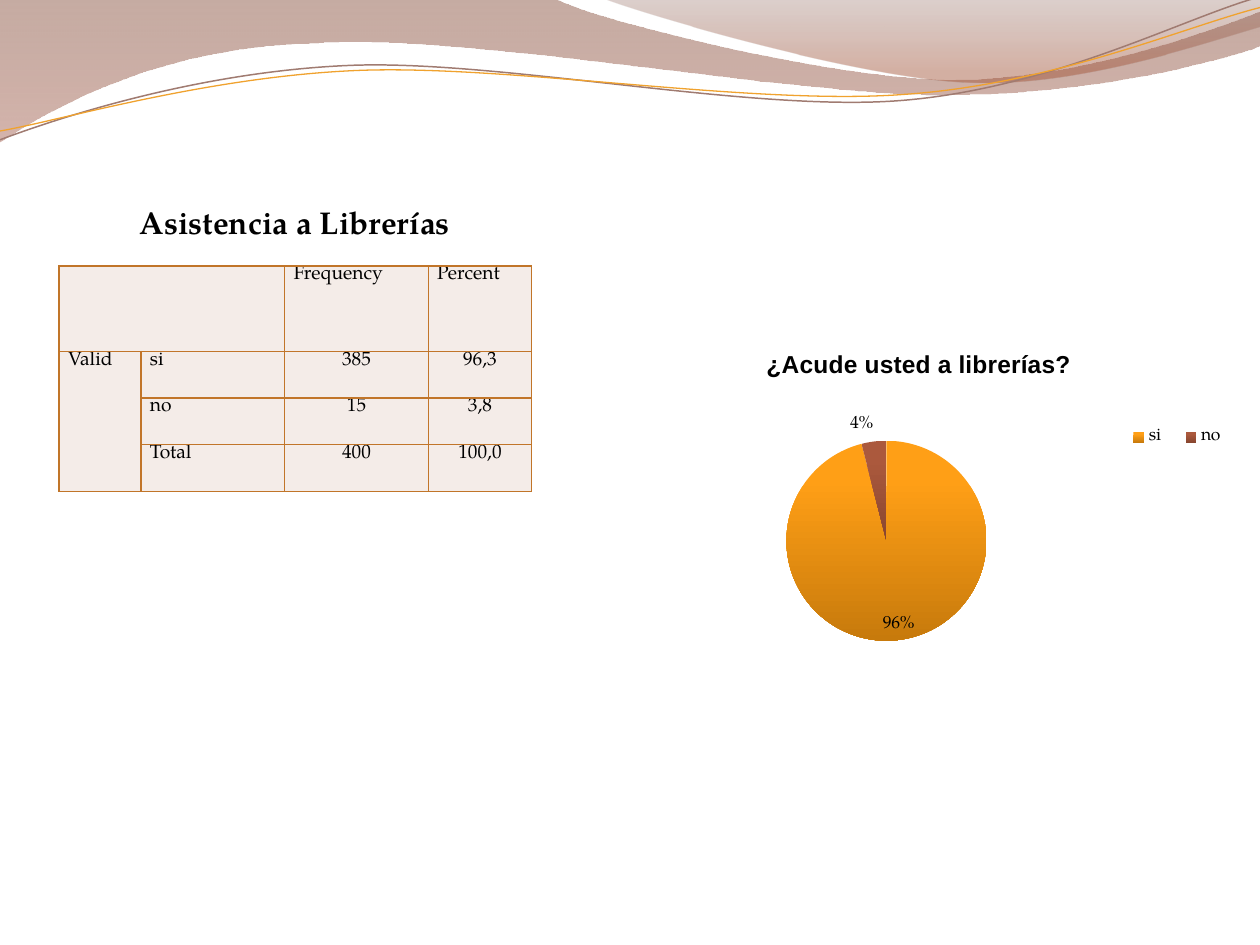
from dataclasses import dataclass

from lxml import etree
from pptx import Presentation
from pptx.chart.data import CategoryChartData
from pptx.dml.color import RGBColor
from pptx.enum.chart import XL_CHART_TYPE, XL_LABEL_POSITION, XL_LEGEND_POSITION
from pptx.enum.text import MSO_ANCHOR, PP_ALIGN
from pptx.oxml import parse_xml
from pptx.oxml.ns import nsdecls, qn
from pptx.util import Inches, Pt

PIE = XL_CHART_TYPE.PIE
BEST_FIT = XL_LABEL_POSITION.BEST_FIT
LEGEND_RIGHT = XL_LEGEND_POSITION.RIGHT
TOP = MSO_ANCHOR.TOP
LEFT, CENTER = PP_ALIGN.LEFT, PP_ALIGN.CENTER

BLACK = RGBColor(0x00, 0x00, 0x00)
CELL_FILL = RGBColor(0xF4, 0xEC, 0xE8)
BORDER = RGBColor(0xC1, 0x75, 0x29)
ORANGE = RGBColor(0xF0, 0xA2, 0x2E)
MAUVE = RGBColor(0xA0, 0x7B, 0x71)
SERIF = "TeX Gyre Pagella"


@dataclass(frozen=True)
class Stop:
    position: float
    color: RGBColor
    opacity: int = 100


@dataclass(frozen=True)
class Wave:
    """A curved outline: two-number steps are lines, six-number steps are Bezier curves."""
    start: tuple
    steps: tuple
    stops: tuple = ()
    line_color: RGBColor | None = None
    line_width: float = 0


WAVES = (
    Wave((0, 0), ((4.4, -0.01), (4.76, 0.17, 6.64, 0.63, 7.58, 0.63),
                  (8.53, 0.63, 9.58, 0.26, 10, 0.09), (10.01, 0.36),
                  (9.83, 0.44, 8.7, 0.76, 7.46, 0.75),
                  (6.22, 0.75, 3.82, 0.28, 2.57, 0.34),
                  (1.29, 0.36, 0.46, 0.83, -0.01, 1.13), (0, 0)),
         (Stop(0, RGBColor(0x81, 0x47, 0x33), 45), Stop(1, RGBColor(0xB1, 0x76, 0x67), 55))),
    Wave((4.79, -0.01), ((5.09, 0.11, 6.82, 0.62, 7.69, 0.65),
                         (8.56, 0.69, 9.61, 0.32, 10, 0.21), (10, 0), (4.79, -0.01)),
         (Stop(0, RGBColor(0x8C, 0x63, 0x59), 30), Stop(0.8, RGBColor(0xA1, 0x51, 0x35), 45))),
    Wave((0, 1.11), ((0.48, 0.93, 1.58, 0.57, 2.77, 0.52),
                     (3.95, 0.47, 5.93, 0.89, 7.13, 0.8),
                     (8.33, 0.71, 9.38, 0.15, 9.98, -0.02)),
         line_color=MAUVE, line_width=0.85),
    Wave((0, 1.04), ((0.47, 0.96, 1.64, 0.61, 2.83, 0.56),
                     (4.03, 0.51, 5.97, 0.84, 7.17, 0.75),
                     (8.36, 0.67, 9.41, 0.21, 10, 0.06)),
         line_color=ORANGE, line_width=0.75),
)
COLUMN_WIDTHS = (0.65, 1.14, 1.14, 0.82)
ROW_HEIGHTS = (0.68, 0.37, 0.37, 0.37)
TABLE_ROWS = (
    ("", "", "Frequency", "Percent"),
    ("Valid", "si", "385", "96,3"),
    ("", "no", "15", "3,8"),
    ("", "Total", "400", "100,0"),
)
SLICES = (
    ("si", 96, (Stop(0.2, RGBColor(0xFF, 0x9F, 0x16)), Stop(1, RGBColor(0xC7, 0x7A, 0x0C)))),
    ("no", 4, (Stop(0.2, RGBColor(0xAB, 0x59, 0x3D)), Stop(1, RGBColor(0x88, 0x46, 0x2F)))),
)


def set_format(target, values: dict) -> None:
    for name, value in values.items():
        setattr(target, name, value)


def set_font(font, size: float, name: str = SERIF, bold: bool = False) -> None:
    set_format(font, {"name": name, "size": Pt(size), "bold": bold})
    font.color.rgb = BLACK


def fill_gradient(fill, stops: tuple) -> None:
    """Shade from top to bottom."""
    fill.gradient()
    fill.gradient_angle = 270
    for target, stop in zip(fill.gradient_stops, stops):
        target.position = stop.position
        target.color.rgb = stop.color
    for color, stop in zip(fill._xPr.iter(qn("a:srgbClr")), stops):
        if stop.opacity < 100:
            etree.SubElement(color, qn("a:alpha"), val=str(stop.opacity * 1000))


def bend_segments(shape, steps: tuple) -> None:
    """Join the three straight segments of each six-number step into one Bezier curve."""
    segments = iter(list(shape._element.iter(qn("a:lnTo"))))
    for step in steps:
        first = next(segments)
        if len(step) == 6:
            curve = etree.Element(qn("a:cubicBezTo"))
            first.addprevious(curve)
            for segment in (first, next(segments), next(segments)):
                curve.append(segment[0])
                segment.getparent().remove(segment)


def add_wave(slide, wave: Wave) -> None:
    builder = slide.shapes.build_freeform(*map(Inches, wave.start))
    points = [(Inches(step[index]), Inches(step[index + 1]))
              for step in wave.steps for index in range(0, len(step), 2)]
    builder.add_line_segments(points, close=bool(wave.stops))
    shape = builder.convert_to_shape()
    bend_segments(shape, wave.steps)
    shape.shadow.inherit = False
    if wave.stops:
        fill_gradient(shape.fill, wave.stops)
        shape.line.fill.background()
    else:
        shape.fill.background()
        shape.line.color.rgb = wave.line_color
        shape.line.width = Pt(wave.line_width)


def add_borders(cell) -> None:
    properties = cell._tc.get_or_add_tcPr()
    for index, side in enumerate(("lnL", "lnR", "lnT", "lnB")):
        properties.insert(index, parse_xml(
            f'<a:{side} {nsdecls("a")} w="{Pt(1)}"><a:solidFill>'
            f'<a:srgbClr val="{BORDER}"/></a:solidFill></a:{side}>'))


def add_frequency_table(slide) -> None:
    frame = slide.shapes.add_table(len(ROW_HEIGHTS), len(COLUMN_WIDTHS), Inches(0.47),
                                   Inches(2.11), Inches(sum(COLUMN_WIDTHS)),
                                   Inches(sum(ROW_HEIGHTS)))
    table = frame.table
    set_format(table, {"first_row": False, "horz_banding": False})
    for column, width in zip(table.columns, COLUMN_WIDTHS):
        column.width = Inches(width)
    for row, height in zip(table.rows, ROW_HEIGHTS):
        row.height = Inches(height)
    for row_index, texts in enumerate(TABLE_ROWS):
        for column_index, text in enumerate(texts):
            cell = table.cell(row_index, column_index)
            set_format(cell, {"margin_left": Inches(0.07), "margin_right": Inches(0.07),
                              "margin_top": 0, "margin_bottom": 0, "vertical_anchor": TOP})
            cell.fill.solid()
            cell.fill.fore_color.rgb = CELL_FILL
            add_borders(cell)
            para = cell.text_frame.paragraphs[0]
            para.line_spacing = Pt(11)
            para.alignment = CENTER if row_index and column_index > 1 else LEFT
            if text:
                span = para.add_run()
                span.text = text
                set_font(span.font, 11)
    table.cell(0, 0).merge(table.cell(0, 1))
    table.cell(1, 0).merge(table.cell(3, 0))


def place(element, values: dict, inner: bool = False) -> None:
    """Give a chart part a manual layout in fractions of the chart."""
    for old in element.findall(qn("c:layout")):
        element.remove(old)
    target = '<c:layoutTarget val="inner"/>' if inner else ""
    modes = '<c:xMode val="edge"/><c:yMode val="edge"/>'
    sizes = "".join(f'<c:{name} val="{value}"/>' for name, value in values.items())
    layout = parse_xml(f'<c:layout {nsdecls("c")}><c:manualLayout>{target}{modes}{sizes}'
                       '</c:manualLayout></c:layout>')
    before = element.find(qn("c:tx"))
    if before is None:
        before = element.find(qn("c:legendPos"))
    if before is None:
        element.insert(0, layout)
    else:
        before.addnext(layout)


def add_pie(slide) -> None:
    data = CategoryChartData()
    data.categories = [name for name, _, _ in SLICES]
    data.add_series("Series 1", [value for _, value, _ in SLICES])
    chart = slide.shapes.add_chart(PIE, Inches(4.51), Inches(2.73), Inches(5.49),
                                   Inches(2.48), data).chart
    set_font(chart.font, 10)
    chart.has_title = True
    title_frame = chart.chart_title.text_frame
    title_frame.text = "¿Acude usted a librerías?"
    set_font(title_frame.paragraphs[0].runs[0].font, 14, "Arial", True)
    chart.has_legend = True
    set_format(chart.legend, {"position": LEGEND_RIGHT, "include_in_layout": False})
    plot = chart.plots[0]
    set_format(plot, {"vary_by_categories": True, "has_data_labels": True})
    set_format(plot.data_labels, {"show_percentage": True, "show_value": False,
                                  "number_format": "0%", "number_format_is_linked": False,
                                  "position": BEST_FIT})
    for index, (_, _, stops) in enumerate(SLICES):
        fill_gradient(plot.series[0].points[index].format.fill, stops)
    place(chart.chart_title._element, {"x": 0.28, "y": 0})
    place(chart.legend._element, {"x": 0.79, "y": 0.26, "w": 0.18, "h": 0.08})
    plot_area = chart._chartSpace.chart.plotArea
    place(plot_area, {"x": 0.31, "y": 0.31, "w": 0.3, "h": 0.64}, inner=True)


def add_title(slide) -> None:
    title = slide.shapes.title
    set_format(title, {"left": Inches(1.01), "top": Inches(1.56),
                       "width": Inches(2.81), "height": Inches(0.4)})
    set_format(title.text_frame, {"text": "Asistencia a Librerías", "word_wrap": True,
                                  "vertical_anchor": TOP})
    para = title.text_frame.paragraphs[0]
    para.alignment = LEFT
    set_font(para.runs[0].font, 18, bold=True)


def main() -> None:
    deck = Presentation()
    set_format(deck, {"slide_width": Inches(10), "slide_height": Inches(7.5)})
    slide = deck.slides.add_slide(deck.slide_layouts[5])
    for wave in WAVES:
        add_wave(slide, wave)
    add_frequency_table(slide)
    add_pie(slide)
    add_title(slide)
    deck.save("out.pptx")


if __name__ == "__main__":
    main()
